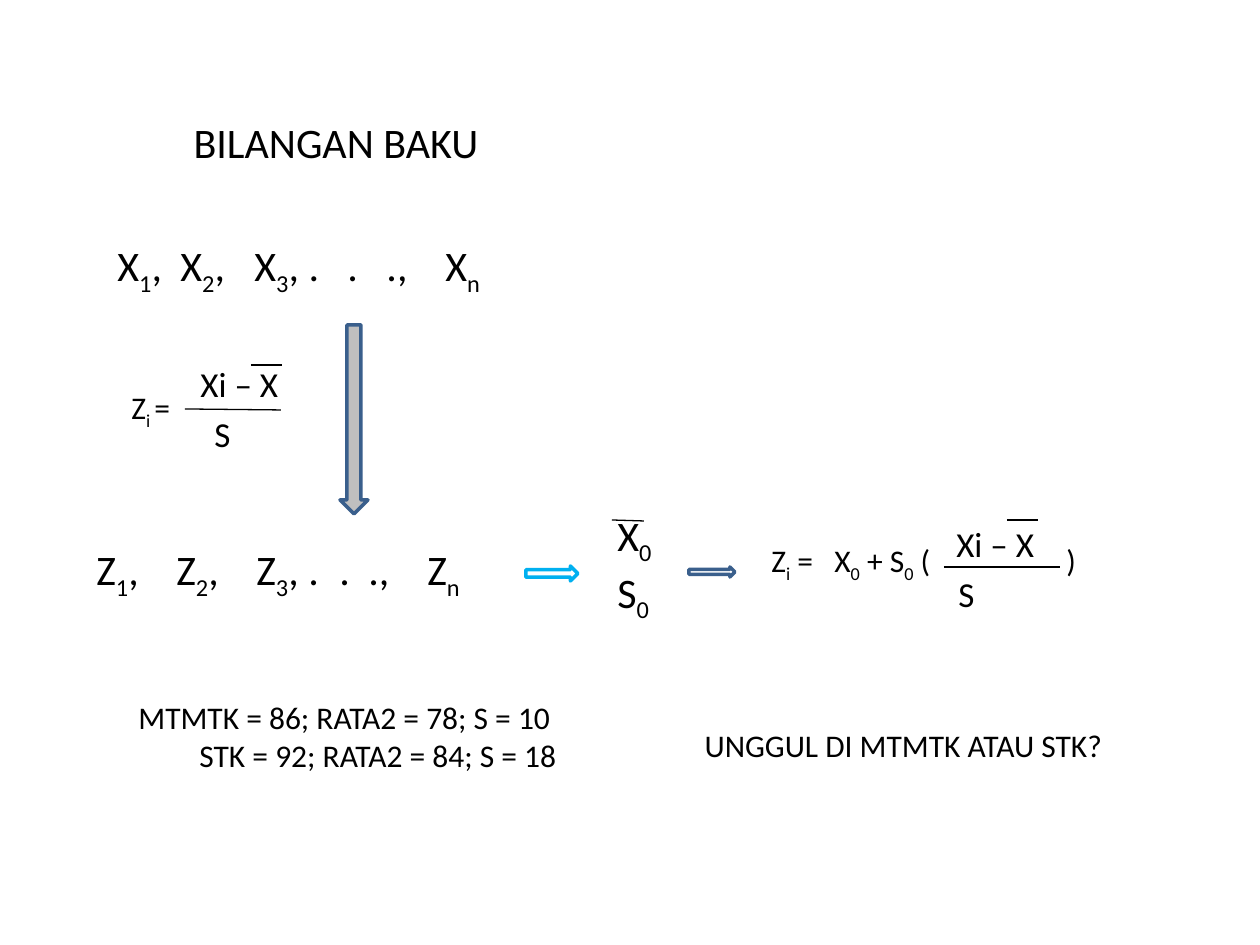
from lxml import etree
from pptx import Presentation
from pptx.dml.color import RGBColor
from pptx.enum.shapes import MSO_CONNECTOR, MSO_SHAPE
from pptx.enum.text import MSO_ANCHOR, PP_ALIGN
from pptx.oxml.ns import qn
from pptx.util import Pt

PX = 914400 // 126  # EMU per px
BLACK = RGBColor(0x00, 0x00, 0x00)
WHITE = RGBColor(0xFF, 0xFF, 0xFF)
GRAY = RGBColor(0xBF, 0xBF, 0xBF)
NAVY = RGBColor(0x3A, 0x5F, 0x8C)
CYAN = RGBColor(0x00, 0xB0, 0xF0)
LEFT, CENTER = PP_ALIGN.LEFT, PP_ALIGN.CENTER

prs = Presentation()
prs.slide_width, prs.slide_height = 1260 * PX, 945 * PX
s = prs.slides.add_slide(prs.slide_layouts[5])


def write(sp, lines, size, aligns=(LEFT,), tabs=()):
    """Fill sp with lines; every second part between bars is a subscript."""
    tf = sp.text_frame
    tf.word_wrap = True
    tf.vertical_anchor = MSO_ANCHOR.MIDDLE
    for i, line in enumerate(lines):
        p = tf.paragraphs[0] if i == 0 else tf.add_paragraph()
        p.alignment = aligns[i % len(aligns)]
        if tabs:
            tab_list = etree.SubElement(p._p.get_or_add_pPr(), qn("a:tabLst"))
            for pos in tabs:
                etree.SubElement(tab_list, qn("a:tab"), pos=str(pos * PX), algn="l")
        for j, part in enumerate(line.split("|")):
            if not part:
                continue
            r = p.add_run()
            r.text = part
            for name, value in {"name": "Calibri", "size": Pt(size)}.items():
                setattr(r.font, name, value)
            r.font.color.rgb = BLACK
            if j % 2:
                r.font._element.set("baseline", "-25000")


def add_text(box, *args, **kwargs):
    sp = s.shapes.add_textbox(*(v * PX for v in box))
    write(sp, *args, **kwargs)
    return sp


# Title
title = s.shapes.title
for name, value in {"left": 105, "top": 84, "width": 462, "height": 116}.items():
    setattr(title, name, value * PX)
write(title, ["BILANGAN BAKU"], 24, (CENTER,))

# Raw and standardised series
add_text((105, 242, 472, 53), ["X|1|,\tX|2|,\tX|3|, .\t.\t.,\tX|n|"], 24,
         tabs=(63, 137, 230, 269, 328))
z_series = add_text((84, 536, 431, 73), ["Z|1|,\tZ|2|,\tZ|3|, .\t.\t.,\tZ|n|"], 24,
                    tabs=(80, 160, 243, 272, 331))

# New mean and deviation
target = add_text((605, 514, 73, 105), ["X|0|", "S|0|"], 24)
for sp in (z_series, target):
    sp.fill.solid()
    sp.fill.fore_color.rgb = WHITE

# Formulas
add_text((119, 357, 228, 105), ["Z|i |="], 18)
add_text((759, 489, 355, 147), ["Z|i| =\tX|0| + S|0| (\t)"], 18, tabs=(63, 295))

# Fractions: numerator corner, then denominator corner
for (nx, ny), (dx, dy) in (((188, 357), (175, 407)), ((944, 517), (919, 567))):
    add_text((nx, ny, 116, 53), ["Xi – X"], 20)
    add_text((dx, dy, 95, 53), ["S"], 20, (CENTER,))

# Fraction bars and mean bars
for x1, y1, x2, y2 in ((185, 409, 281, 410), (944, 567, 1060, 567),
                       (251, 365, 282, 365), (612, 520, 644, 521),
                       (1007, 520, 1038, 520)):
    line = s.shapes.add_connector(MSO_CONNECTOR.STRAIGHT,
                                  x1 * PX, y1 * PX, x2 * PX, y2 * PX)
    line.line.color.rgb = BLACK
    line.line.width = Pt(0.75)
    etree.SubElement(line._element.spPr, qn("a:effectLst"))

# Block arrows
for kind, box, fill, color in (
        (MSO_SHAPE.DOWN_ARROW, (340, 325, 28, 189), GRAY, NAVY),
        (MSO_SHAPE.RIGHT_ARROW, (526, 566, 52, 15), WHITE, CYAN),
        (MSO_SHAPE.RIGHT_ARROW, (689, 567, 46, 10), None, NAVY)):
    arrow = s.shapes.add_shape(kind, *(v * PX for v in box))
    arrow.shadow.inherit = False
    if fill is None:
        arrow.fill.background()
    else:
        arrow.fill.solid()
        arrow.fill.fore_color.rgb = fill
    arrow.line.color.rgb = color
    arrow.line.width = Pt(2)

# Worked example
add_text((126, 662, 504, 147),
         ["MTMTK = 86; RATA2 = 78; S = 10", "STK = 92; RATA2 = 84; S = 18"],
         18, (LEFT, CENTER))
add_text((683, 703, 441, 84), ["UNGGUL DI MTMTK ATAU STK?"], 18, (CENTER,))

prs.save("out.pptx")
